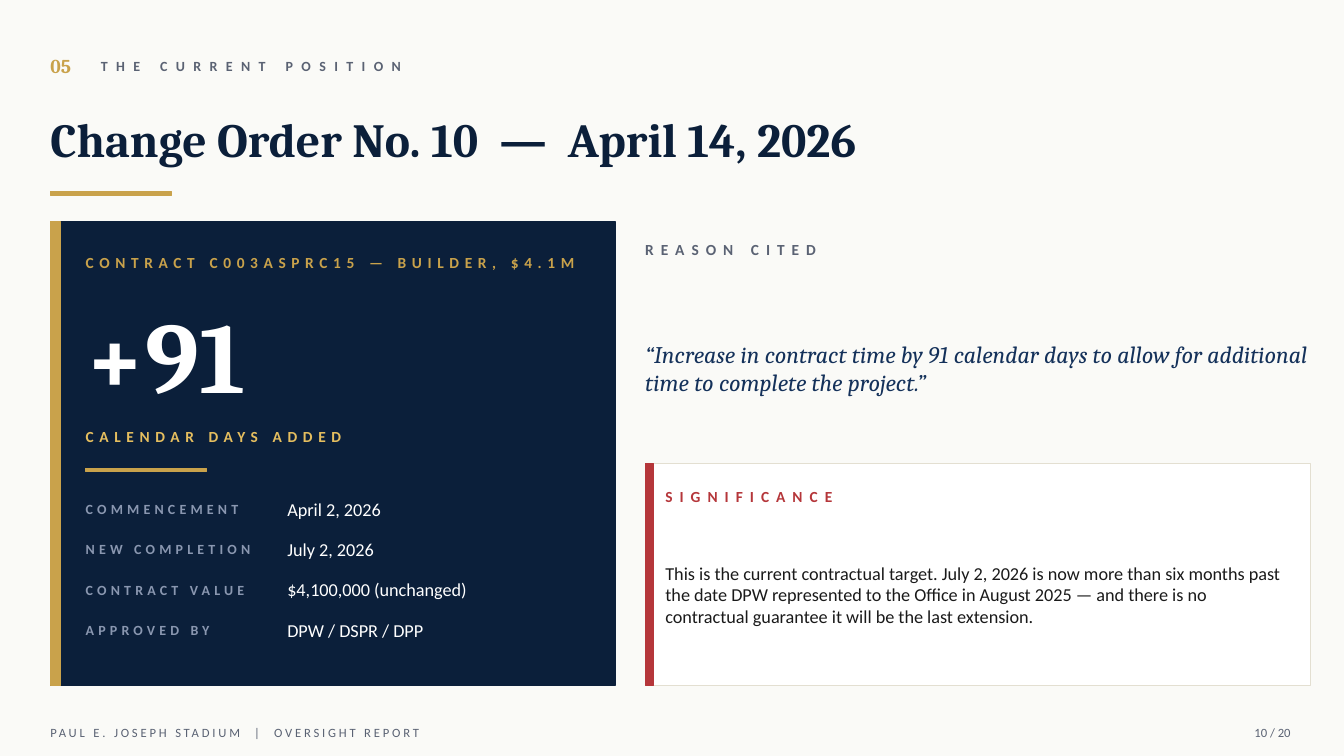
from dataclasses import dataclass
from typing import Iterator

from pptx import Presentation
from pptx.dml.color import RGBColor as Color
from pptx.enum.shapes import MSO_SHAPE as Preset
from pptx.enum.text import MSO_ANCHOR as Anchor, PP_ALIGN as Align
from pptx.util import Inches, Pt

CELL = 0.1
COLUMNS, ROWS = 133.3, 75
LEFT, PANEL_LEFT, VALUE_LEFT, RIGHT, NOTE_LEFT = 5, 8.5, 28.5, 64, 66
PANEL_TOP, NOTE_TOP, PANEL_BOTTOM = 22, 46, 68
PANEL_WIDTH, RIGHT_WIDTH = 56, 66
FACT_TOP, FACT_STEP = 48.5, 4
FOOTER_TOP = 71.2

COLOURS = {
    "paper": "FAFAF7", "navy": "0B1F3A", "gold": "C9A24B", "bright": "E5BE5F",
    "slate": "5A6273", "mist": "8A97B0", "white": "FFFFFF", "blue": "14315A",
    "red": "B5363A", "border": "E3DFD1", "ink": "1A1A1A",
}


@dataclass(frozen=True)
class Area:
    column: float
    row: float
    columns: float
    rows: float

    def lengths(self) -> tuple:
        cells = (self.column, self.row, self.columns, self.rows)
        return tuple(Inches(cell * CELL) for cell in cells)


@dataclass(frozen=True)
class Block:
    area: Area
    fill: str
    line: str
    weight: float = 1


@dataclass(frozen=True)
class Style:
    size: float
    colour: str
    name: str = "Calibri"
    bold: bool = False
    italic: bool = False
    tracking: float = 0


@dataclass(frozen=True)
class Label:
    area: Area
    text: str
    style: Style
    align: Align = Align.LEFT
    divider: str = ""
    gap: float = 0


def heading(size: float, colour: str, tracking: float) -> Style:
    return Style(size, colour, bold=True, tracking=tracking)


def serif(size: float, colour: str) -> Style:
    return Style(size, colour, "Cambria", bold=True)


def solid(area: Area, colour: str) -> Block:
    return Block(area, colour, colour)


FACT_NAME = heading(10, "mist", 3)
FACT_VALUE = Style(13, "white")

FACTS = [
    ("COMMENCEMENT", "April 2, 2026"),
    ("NEW COMPLETION", "July 2, 2026"),
    ("CONTRACT VALUE", "$4,100,000 (unchanged)"),
    ("APPROVED BY", "DPW / DSPR / DPP"),
]

PANEL_HEIGHT = PANEL_BOTTOM - PANEL_TOP
NOTE_HEIGHT = PANEL_BOTTOM - NOTE_TOP

BLOCKS = [
    solid(Area(LEFT, 19, 12, 0.4), "gold"),
    solid(Area(LEFT, PANEL_TOP, PANEL_WIDTH, PANEL_HEIGHT), "navy"),
    solid(Area(LEFT, PANEL_TOP, 1, PANEL_HEIGHT), "gold"),
    solid(Area(PANEL_LEFT, 46.5, 12, 0.3), "gold"),
    Block(Area(RIGHT, NOTE_TOP, RIGHT_WIDTH, NOTE_HEIGHT), "white", "border", 0.75),
    solid(Area(RIGHT, NOTE_TOP, 0.8, NOTE_HEIGHT), "red"),
]

LABELS = [
    Label(Area(LEFT, 4.5, 6, 4), "05", serif(14, "gold")),
    Label(Area(10, 5, 80, 3), "THE CURRENT POSITION", heading(10, "slate", 6)),
    Label(Area(LEFT, 9.5, 120, 8.5), "Change Order No. 10 — April 14, 2026",
          serif(34, "navy"), divider="—", gap=7.5),
    Label(Area(PANEL_LEFT, 24, 51.5, 4), "CONTRACT C003ASPRC15 — BUILDER, $4.1M",
          heading(11, "gold", 4)),
    Label(Area(PANEL_LEFT, 28.5, 51.5, 13), "+91", serif(72, "white")),
    Label(Area(PANEL_LEFT, 41.5, 51.5, 3.5), "CALENDAR DAYS ADDED",
          heading(11, "bright", 4)),
    Label(Area(RIGHT, 23, 60, 3.5), "REASON CITED", heading(11, "slate", 5)),
    Label(Area(RIGHT, 26.5, RIGHT_WIDTH, 20),
          "“Increase in contract time by 91 calendar days to allow for "
          "additional time to complete the project.”",
          Style(17, "blue", "Cambria", italic=True)),
    Label(Area(NOTE_LEFT, 47.5, 62, 3.5), "SIGNIFICANCE", heading(11, "red", 5)),
    Label(Area(NOTE_LEFT, 51.5, 62, 15),
          "This is the current contractual target. July 2, 2026 is now more "
          "than six months past the date DPW represented to the Office in "
          "August 2025 — and there is no contractual guarantee it will be "
          "the last extension.",
          Style(13, "ink")),
    Label(Area(LEFT, FOOTER_TOP, 80, 3),
          "PAUL E. JOSEPH STADIUM | OVERSIGHT REPORT",
          Style(9, "slate", tracking=2), divider="|", gap=4),
    Label(Area(118, FOOTER_TOP, 10, 3), "10 / 20", Style(9, "slate"), Align.RIGHT),
]


def paint(colour: str) -> Color:
    return Color.from_string(COLOURS[colour])


def fact_labels() -> Iterator[Label]:
    for index, (name, value) in enumerate(FACTS):
        row = FACT_TOP + index * FACT_STEP
        yield Label(Area(PANEL_LEFT, row, 20, 4), name, FACT_NAME)
        yield Label(Area(VALUE_LEFT, row, 32, 4), value, FACT_VALUE)


def draw_block(page, block: Block) -> None:
    shape = page.shapes.add_shape(Preset.RECTANGLE, *block.area.lengths())
    shape.shadow.inherit = False
    shape.fill.solid()
    shape.fill.fore_color.rgb = paint(block.fill)
    shape.line.color.rgb = paint(block.line)
    shape.line.width = Pt(block.weight)


def pieces(label: Label) -> list[tuple[str, float]]:
    tracking = label.style.tracking
    if not label.divider:
        return [(label.text, tracking)]
    before, after = label.text.split(f" {label.divider} ")
    space = (" ", tracking + label.gap)
    return [(before, tracking), space, (label.divider, tracking), space, (after, tracking)]


def add_span(para, text: str, style: Style, tracking: float) -> None:
    span = para.add_run()
    span.text = text
    formats = {"name": style.name, "size": Pt(style.size),
               "bold": style.bold, "italic": style.italic}
    for attribute, value in formats.items():
        setattr(span.font, attribute, value)
    span.font.color.rgb = paint(style.colour)
    if tracking:
        span._r.get_or_add_rPr().set("spc", str(round(tracking * 100)))


def draw_label(page, label: Label) -> None:
    frame = page.shapes.add_textbox(*label.area.lengths()).text_frame
    formats = {"word_wrap": True, "vertical_anchor": Anchor.MIDDLE,
               "margin_left": 0, "margin_top": 0,
               "margin_right": 0, "margin_bottom": 0}
    for attribute, value in formats.items():
        setattr(frame, attribute, value)
    para = frame.paragraphs[0]
    para.alignment = label.align
    for text, tracking in pieces(label):
        add_span(para, text, label.style, tracking)


def main() -> None:
    deck = Presentation()
    deck.slide_width = Inches(COLUMNS * CELL)
    deck.slide_height = Inches(ROWS * CELL)
    page = deck.slides.add_slide(deck.slide_layouts[6])
    page.background.fill.solid()
    page.background.fill.fore_color.rgb = paint("paper")
    for block in BLOCKS:
        draw_block(page, block)
    for label in [*LABELS, *fact_labels()]:
        draw_label(page, label)
    deck.save("out.pptx")


if __name__ == "__main__":
    main()
